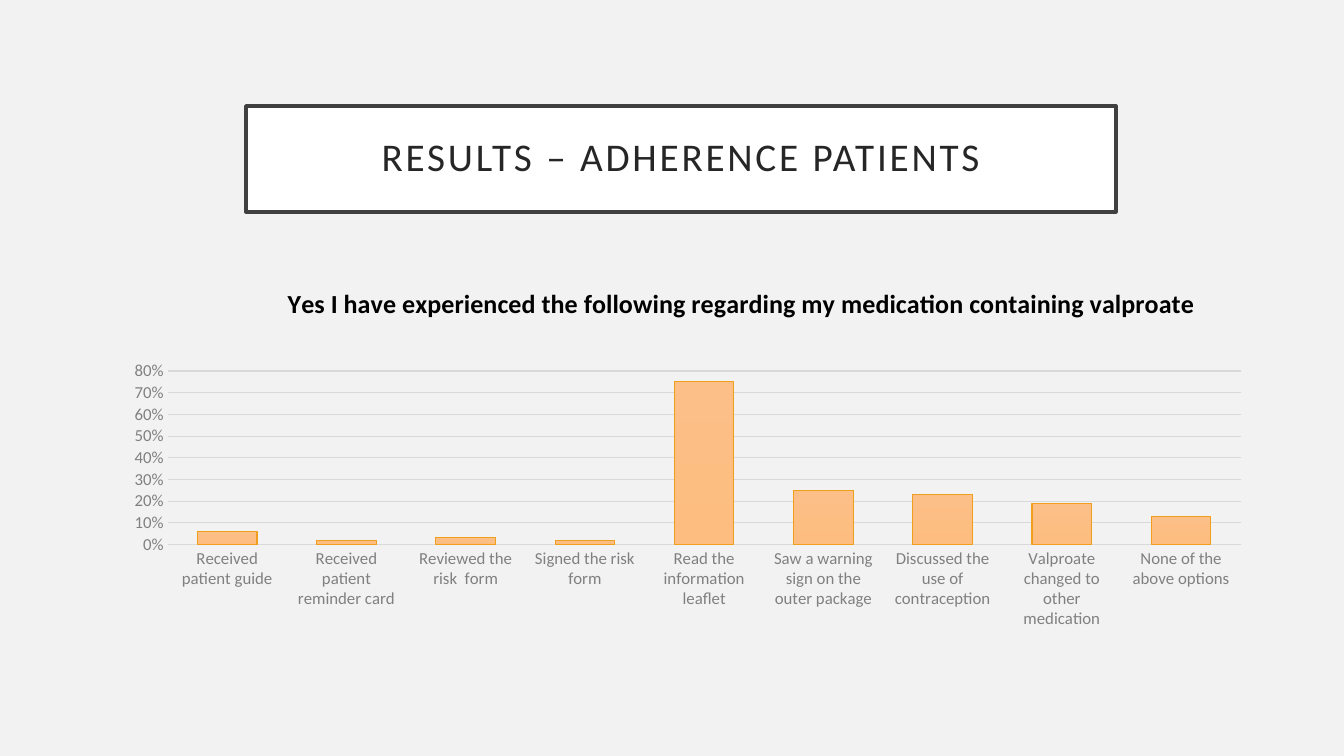
from dataclasses import dataclass

from lxml import etree
from pptx import Presentation
from pptx.chart.data import CategoryChartData
from pptx.dml.color import RGBColor
from pptx.enum.chart import XL_CHART_TYPE, XL_TICK_MARK
from pptx.enum.text import MSO_ANCHOR, PP_ALIGN
from pptx.oxml.ns import qn
from pptx.util import Cm, Pt

COLUMNS = XL_CHART_TYPE.COLUMN_CLUSTERED
NO_TICK = XL_TICK_MARK.NONE
MIDDLE = MSO_ANCHOR.MIDDLE
CENTER = PP_ALIGN.CENTER


@dataclass(frozen=True)
class Theme:
    font: str = "Calibri"
    background: str = "F2F2F2"
    panel: str = "FFFFFF"
    frame: str = "404040"
    title: str = "262626"
    heading: str = "000000"
    label: str = "808080"
    grid: str = "D9D9D9"
    bar_line: str = "F19E1C"
    bar_stops: tuple = ("FCBF87", "FDBD80")
    title_size: float = 28
    heading_size: float = 18.6
    label_size: float = 12


THEME = Theme()

ADHERENCE = {
    "Received patient guide": 0.06,
    "Received patient reminder card": 0.02,
    "Reviewed the risk  form": 0.03,
    "Signed the risk form": 0.02,
    "Read the information leaflet": 0.75,
    "Saw a warning sign on the outer package": 0.25,
    "Discussed the use of contraception": 0.23,
    "Valproate changed to other medication": 0.19,
    "None of the above options": 0.13,
}


def rgb(value):
    return RGBColor.from_string(value)


def set_attrs(target, values):
    for name, value in values.items():
        setattr(target, name, value)


def format_font(font, size, color, bold=False):
    set_attrs(font, {"name": THEME.font, "size": Pt(size), "bold": bold})
    font.color.rgb = rgb(color)


def format_line(line, color, width):
    line.color.rgb = rgb(color)
    line.width = Pt(width)


def set_layout(element, index, values):
    for old in element.findall(qn("c:layout")):
        element.remove(old)
    layout = etree.Element(qn("c:layout"))
    manual = etree.SubElement(layout, qn("c:manualLayout"))
    for name, value in values.items():
        etree.SubElement(manual, qn(f"c:{name}")).set("val", str(value))
    element.insert(index, layout)


def add_title(s, box, text):
    sp = s.shapes.title
    set_attrs(sp, dict(zip(("left", "top", "width", "height"), box)))
    sp.fill.solid()
    sp.fill.fore_color.rgb = rgb(THEME.panel)
    format_line(sp.line, THEME.frame, 2.5)
    tf = sp.text_frame
    sides = ("left", "top", "right", "bottom")
    set_attrs(tf, {f"margin_{side}": Cm(0.5) for side in sides})
    set_attrs(tf, {"vertical_anchor": MIDDLE, "word_wrap": True})
    p = tf.paragraphs[0]
    set_attrs(p, {"alignment": CENTER, "line_spacing": 0.9})
    r = p.add_run()
    r.text = text
    format_font(r.font, THEME.title_size, THEME.title)
    r.font._element.set("spc", "200")


def add_heading(chart, text):
    chart.has_title = True
    heading = chart.chart_title
    p = heading.text_frame.paragraphs[0]
    r = p.add_run()
    r.text = text
    format_font(r.font, THEME.heading_size, THEME.heading, True)
    set_layout(heading._element, 1,
               {"xMode": "edge", "yMode": "edge", "x": 0.15, "y": 0.06})


def format_axes(chart):
    for axis in (chart.category_axis, chart.value_axis):
        set_attrs(axis, {"major_tick_mark": NO_TICK, "minor_tick_mark": NO_TICK})
        format_font(axis.tick_labels.font, THEME.label_size, THEME.label)
    format_line(chart.category_axis.format.line, THEME.grid, 0.75)
    axis = chart.value_axis
    set_attrs(axis, {"minimum_scale": 0, "maximum_scale": 0.8,
                     "major_unit": 0.1, "has_major_gridlines": True})
    set_attrs(axis.tick_labels, {"number_format": "0%",
                                 "number_format_is_linked": False})
    axis.format.line.fill.background()
    format_line(axis.major_gridlines.format.line, THEME.grid, 0.75)


def format_bars(plot):
    set_attrs(plot, {"gap_width": 100, "overlap": -24,
                     "vary_by_categories": False})
    bars = plot.series[0].format
    bars.fill.gradient()
    bars.fill.gradient_angle = 270
    for position, (stop, color) in enumerate(
            zip(bars.fill.gradient_stops, THEME.bar_stops)):
        stop.color.rgb = rgb(color)
        stop.position = position
    format_line(bars.line, THEME.bar_line, 0.75)


def add_adherence_chart(s, box, heading, values):
    data = CategoryChartData(number_format="0%")
    data.categories = list(values)
    data.add_series("Series 1", list(values.values()))
    chart = s.shapes.add_chart(COLUMNS, *box, data).chart
    chart.has_legend = False
    format_font(chart.font, 10, THEME.heading)
    add_heading(chart, heading)
    format_axes(chart)
    format_bars(chart.plots[0])
    set_layout(chart._chartSpace.chart.plotArea, 0,
               {"layoutTarget": "inner", "xMode": "edge", "yMode": "edge",
                "x": 0.05, "y": 0.3, "w": 0.93, "h": 0.46})


def add_results_slide(prs):
    s = prs.slides.add_slide(prs.slide_layouts[5])
    s.background.fill.solid()
    s.background.fill.fore_color.rgb = rgb(THEME.background)
    add_title(s, (Cm(6.2), Cm(2.67), Cm(21.92), Cm(2.67)),
              "RESULTS – ADHERENCE PATIENTS")
    add_adherence_chart(
        s, (Cm(2.77), Cm(6.5), Cm(29.08), Cm(9.5)),
        "Yes I have experienced the following regarding my medication "
        "containing valproate", ADHERENCE)


def main():
    prs = Presentation()
    set_attrs(prs, {"slide_width": Cm(33.87), "slide_height": Cm(19.05)})
    add_results_slide(prs)
    prs.save("out.pptx")


if __name__ == "__main__":
    main()
